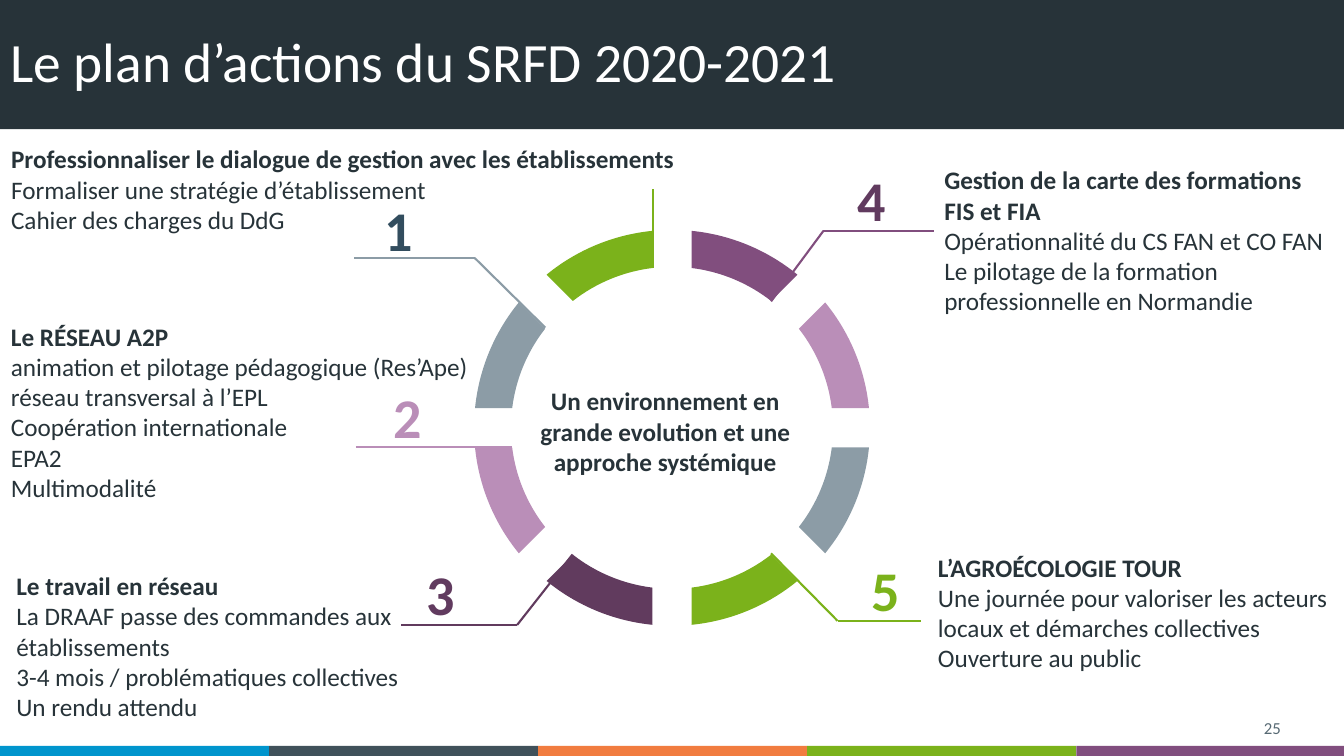
"""Build the SRFD 2020-2021 action plan slide: a ring of eight segments with five numbered actions."""
from math import asin, cos, pi, sin, tan

from lxml import etree
from pptx import Presentation
from pptx.dml.color import RGBColor
from pptx.enum.shapes import MSO_CONNECTOR, MSO_SHAPE
from pptx.enum.text import MSO_ANCHOR, PP_ALIGN
from pptx.oxml.ns import qn
from pptx.util import Pt

RECTANGLE = MSO_SHAPE.RECTANGLE
STRAIGHT = MSO_CONNECTOR.STRAIGHT
LEFT, CENTER, RIGHT = PP_ALIGN.LEFT, PP_ALIGN.CENTER, PP_ALIGN.RIGHT
TOP, MIDDLE = MSO_ANCHOR.TOP, MSO_ANCHOR.MIDDLE

COLORS = {
    "dark": "273339", "white": "FFFFFF", "blue": "0095CD", "slate": "40515A",
    "orange": "F17C3F", "green": "7BB21B", "purple": "814E7E", "lilac": "BA8EB8",
    "grey": "8C9CA6", "plum": "613B5E", "navy": "324D5E", "page": "576973",
    "plum number": "613B5F",
}


def paint(shape, color):
    shape.fill.solid()
    shape.fill.fore_color.rgb = RGBColor.from_string(COLORS[color])
    shape.line.fill.background()
    shape.shadow.inherit = False


def add_text(box, lines, size, color, bold_lines=0, alignment=LEFT, anchor=TOP):
    shape = slide.shapes.add_textbox(*[Pt(length) for length in box])
    text_frame = shape.text_frame
    text_frame.word_wrap = True
    text_frame.vertical_anchor = anchor
    text_frame.text = "\n".join(lines)
    for index, paragraph in enumerate(text_frame.paragraphs):
        paragraph.alignment = alignment
        font = paragraph.runs[0].font
        font.name = "Calibri"
        font.size = Pt(size)
        font.bold = index < bold_lines
        font.color.rgb = RGBColor.from_string(COLORS[color])
    return shape


presentation = Presentation()
presentation.slide_width, presentation.slide_height = Pt(960), Pt(540)
slide = presentation.slides.add_slide(presentation.slide_layouts[6])

header = slide.shapes.add_shape(RECTANGLE, 0, Pt(-0.7), Pt(960), Pt(92.9))
paint(header, "dark")

STRIPE_WIDTH = 192.2
for index, color in enumerate(["blue", "slate", "orange", "green", "purple"]):
    left = index * STRIPE_WIDTH
    width = min(STRIPE_WIDTH, 960 - left)
    stripe = slide.shapes.add_shape(RECTANGLE, Pt(left), Pt(532.8), Pt(width), Pt(7.2))
    paint(stripe, color)

title = add_text((0.3, 19.4, 819.4, 53.3), ["Le plan d’actions du SRFD 2020-2021"], 39.6, "white", anchor=MIDDLE)
title.text_frame.paragraphs[0].line_spacing = 0.9
add_text((706, 509, 216, 22.3), ["25"], 12, "page", alignment=RIGHT, anchor=MIDDLE)

CENTER_X, CENTER_Y = 480, 305.6
OUTER_RADIUS, INNER_RADIUS = 141.4, 115
HALF_GAP = 14
SEGMENT_COLORS = ["purple", "lilac", "grey", "green", "plum", "lilac", "grey", "green"]
for index, color in enumerate(SEGMENT_COLORS):
    outline = []
    for radius, direction in [(OUTER_RADIUS, 1), (INNER_RADIUS, -1)]:
        half_sweep = direction * (pi / 8 - asin(HALF_GAP / radius))
        middle = (index + 0.5) * pi / 4
        handle = 4 / 3 * tan(half_sweep / 2)
        for angle, pull in [(-half_sweep, 0), (-half_sweep, handle), (half_sweep, -handle), (half_sweep, 0)]:
            across, up = sin(middle + angle), cos(middle + angle)
            outline.append((Pt(CENTER_X + radius * (across + pull * up)),
                            Pt(CENTER_Y - radius * (up - pull * across))))
    builder = slide.shapes.build_freeform(*outline[0], scale=1.0)
    builder.add_line_segments(outline[1:], close=True)
    segment = builder.convert_to_shape()
    path_element = segment._element.find(".//" + qn("a:path"))
    steps = list(path_element)
    for arc in (steps[1:4], steps[5:8]):
        curve = etree.Element(qn("a:cubicBezTo"))
        arc[0].addprevious(curve)
        for step in arc:
            curve.append(step[0])
            path_element.remove(step)
    paint(segment, color)

leaders = [
    ("purple", [(550.8, 215.3), (588.2, 164.9), (667.4, 164.9)]),
    ("grey", [(389.5, 234), (339.1, 184.3), (253.2, 184.3)]),
    ("plum", [(409, 396), (369.4, 446.4), (286.6, 446.4)]),
    ("green", [(466.6, 191.5), (466.6, 135.2)]),
    ("lilac", [(254.2, 319.4), (365.8, 319.4)]),
    ("green", [(550.8, 395.3), (598.3, 443.5), (658.1, 443.5)]),
]
for color, points in leaders:
    for start, end in zip(points, points[1:]):
        leader = slide.shapes.add_connector(STRAIGHT, *[Pt(length) for length in start + end])
        leader.line.color.rgb = RGBColor.from_string(COLORS[color])
        leader.line.width = Pt(1.5)
        etree.SubElement(leader._element.spPr, qn("a:effectLst"))

numbers = [
    ("1", 246.6, 136.1, "navy"),
    ("2", 253, 269.6, "lilac"),
    ("3", 276.5, 396, "plum number"),
    ("4", 584.6, 114.9, "plum number"),
    ("5", 594.7, 393.1, "green"),
]
for number, left, top, color in numbers:
    add_text((left, top, 55.4, 55.4), [number], 40, color, bold_lines=1, alignment=RIGHT)

add_text((360, 271.9, 230.4, 72.7), ["Un environnement en grande evolution et une approche systémique"],
         18, "dark", bold_lines=1, alignment=CENTER)

actions = [
    ((662.9, 390.7, 311, 116.6), [
        "L’AGROÉCOLOGIE TOUR",
        "Une journée pour valoriser les acteurs locaux et démarches collectives",
        "Ouverture au public",
    ]),
    ((667.4, 114.1, 286.6, 138.2), [
        "Gestion de la carte des formations FIS et FIA",
        "Opérationnalité du CS FAN et CO FAN",
        "Le pilotage de la formation professionnelle en Normandie",
    ]),
    ((0.7, 225.7, 378.7, 138.2), [
        "Le RÉSEAU A2P",
        "animation et pilotage pédagogique (Res’Ape)",
        "réseau transversal à l’EPL",
        "Coopération internationale",
        "EPA2",
        "Multimodalité",
    ]),
    ((0.8, 99.1, 495.4, 94.3), [
        "Professionnaliser le dialogue de gestion avec les établissements",
        "Formaliser une stratégie d’établissement",
        "Cahier des charges du DdG",
    ]),
    ((4.6, 403.9, 297.4, 116.6), [
        "Le travail en réseau",
        "La DRAAF passe des commandes aux établissements",
        "3-4 mois / problématiques collectives",
        "Un rendu attendu",
    ]),
]
for box, lines in actions:
    add_text(box, lines, 18, "dark", bold_lines=1)

presentation.save("out.pptx")
